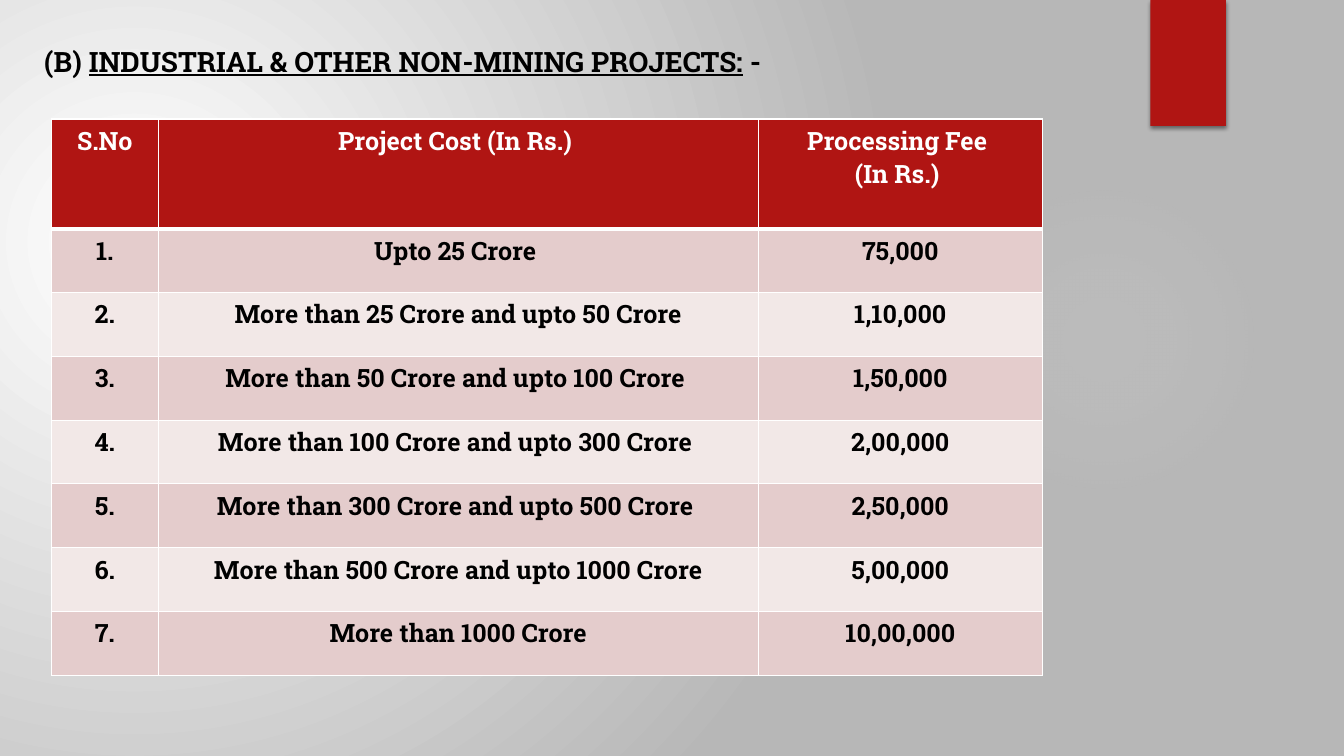
"""Build the processing fee slide for industrial and other non-mining projects."""
from lxml import etree
from pptx import Presentation
from pptx import util as u
from pptx.dml.color import RGBColor
from pptx.enum import shapes, text
from pptx.oxml.ns import qn

COLORS = {"red": "B01513", "white": "FFFFFF", "black": "000000", "grey": "B7B7B7",
          "glow": "F3F3F3", "band_dark": "E4CCCC", "band_light": "F2E8E7"}
FONT = "Roboto Slab"


def style(paragraph, size, color):
    paragraph.font.name = FONT
    paragraph.font.size = u.Pt(size)
    paragraph.font.bold = True
    paragraph.font.color.rgb = RGBColor.from_string(COLORS[color])


def radial_fill(properties, stops, focus):
    gradient = etree.Element(qn("a:gradFill"), rotWithShape="1")
    stop_list = etree.SubElement(gradient, qn("a:gsLst"))
    for position, color, opacity in stops:
        stop = etree.SubElement(stop_list, qn("a:gs"), pos=str(position * 1000))
        tint = etree.SubElement(stop, qn("a:srgbClr"), val=COLORS[color])
        if opacity < 100:
            etree.SubElement(tint, qn("a:alpha"), val=str(opacity * 1000))
    circle = etree.SubElement(gradient, qn("a:path"), {"path": "circle"})
    sides = {side: str(inset * 1000) for side, inset in zip("ltrb", focus)}
    etree.SubElement(circle, qn("a:fillToRect"), sides)
    properties.replace(properties.find(qn("a:solidFill")), gradient)


prs = Presentation()
prs.slide_width, prs.slide_height = u.Inches(13.33), u.Inches(7.5)
slide = prs.slides.add_slide(prs.slide_layouts[6])

slide.background.fill.solid()
radial_fill(slide.element.find(".//" + qn("p:bgPr")),
            [(0, "white", 100), (100, "grey", 100)], (45, 65, 125, 100))

glow = slide.shapes.add_shape(shapes.MSO_SHAPE.OVAL, u.Inches(9.41), u.Inches(1.83),
                              u.Inches(3.08), u.Inches(3.08))
glow.shadow.inherit = False
glow.line.fill.background()
glow.fill.solid()
radial_fill(glow.element.spPr, [(0, "glow", 7), (36, "glow", 6), (69, "glow", 0)],
            (50, 50, 50, 50))

ribbon = slide.shapes.add_shape(shapes.MSO_SHAPE.RECTANGLE, u.Inches(11.41), 0,
                                u.Inches(0.75), u.Inches(1.25))
ribbon.fill.solid()
ribbon.fill.fore_color.rgb = RGBColor.from_string(COLORS["red"])
ribbon.line.fill.background()
ribbon.shadow.inherit = False
shadow = etree.SubElement(ribbon.element.spPr.find(qn("a:effectLst")), qn("a:outerShdw"),
                          blurRad=str(u.Pt(3)), dist=str(u.Pt(2)), dir="5400000",
                          algn="ctr", rotWithShape="0")
shade = etree.SubElement(shadow, qn("a:srgbClr"), val=COLORS["black"])
etree.SubElement(shade, qn("a:alpha"), val="45000")

heading = slide.shapes.add_textbox(u.Inches(0.34), u.Inches(0.39), u.Inches(8.03),
                                   u.Inches(0.44)).text_frame
heading.word_wrap = False
heading.auto_size = text.MSO_AUTO_SIZE.SHAPE_TO_FIT_TEXT
heading_line = heading.paragraphs[0]
for words, underlined in [("(B) ", False),
                          ("INDUSTRIAL & OTHER NON-MINING PROJECTS:", True),
                          (" -", False)]:
    part = heading_line.add_run()
    part.text = words
    part.font.underline = underlined
style(heading_line, 20, "black")

fees = [
    ("S.No", "Project Cost (In Rs.) ", "Processing Fee \n(In Rs.) "),
    ("1.", "Upto 25 Crore ", "75,000"),
    ("2.", "More than 25 Crore and upto 50 Crore", "1,10,000"),
    ("3.", "More than 50 Crore and upto 100 Crore ", "1,50,000"),
    ("4.", "More than 100 Crore and upto 300 Crore ", "2,00,000"),
    ("5.", "More than 300 Crore and upto 500 Crore ", "2,50,000"),
    ("6.", "More than 500 Crore and upto 1000 Crore", "5,00,000"),
    ("7.", "More than 1000 Crore", "10,00,000"),
]
HEIGHT, HEADER_HEIGHT = 5.52, 1.09
row_height = (HEIGHT - HEADER_HEIGHT) / (len(fees) - 1)
fee_table = slide.shapes.add_table(len(fees), 3, u.Inches(0.51), u.Inches(1.18),
                                   u.Inches(9.84), u.Inches(HEIGHT)).table
for column, width in zip(fee_table.columns, (1.06, 5.95, 2.82)):
    column.width = u.Inches(width)

for r, entries in enumerate(fees):
    header = r == 0
    fee_table.rows[r].height = u.Inches(HEADER_HEIGHT if header else row_height)
    fill_color = "red" if header else ("band_dark" if r % 2 else "band_light")
    borders = {"lnL": 1, "lnR": 1, "lnT": 3 if r == 1 else 1, "lnB": 3 if header else 1}
    for c, entry in enumerate(entries):
        cell = fee_table.cell(r, c)
        cell.text = entry
        for paragraph in cell.text_frame.paragraphs:
            paragraph.alignment = text.PP_ALIGN.CENTER
            style(paragraph, 18, "white" if header else "black")
        cell_properties = cell._tc.get_or_add_tcPr()
        for side, points in borders.items():
            edge = etree.SubElement(cell_properties, qn("a:" + side), w=str(u.Pt(points)))
            ink = etree.SubElement(edge, qn("a:solidFill"))
            etree.SubElement(ink, qn("a:srgbClr"), val=COLORS["white"])
        cell.fill.solid()
        cell.fill.fore_color.rgb = RGBColor.from_string(COLORS[fill_color])

prs.save("out.pptx")
